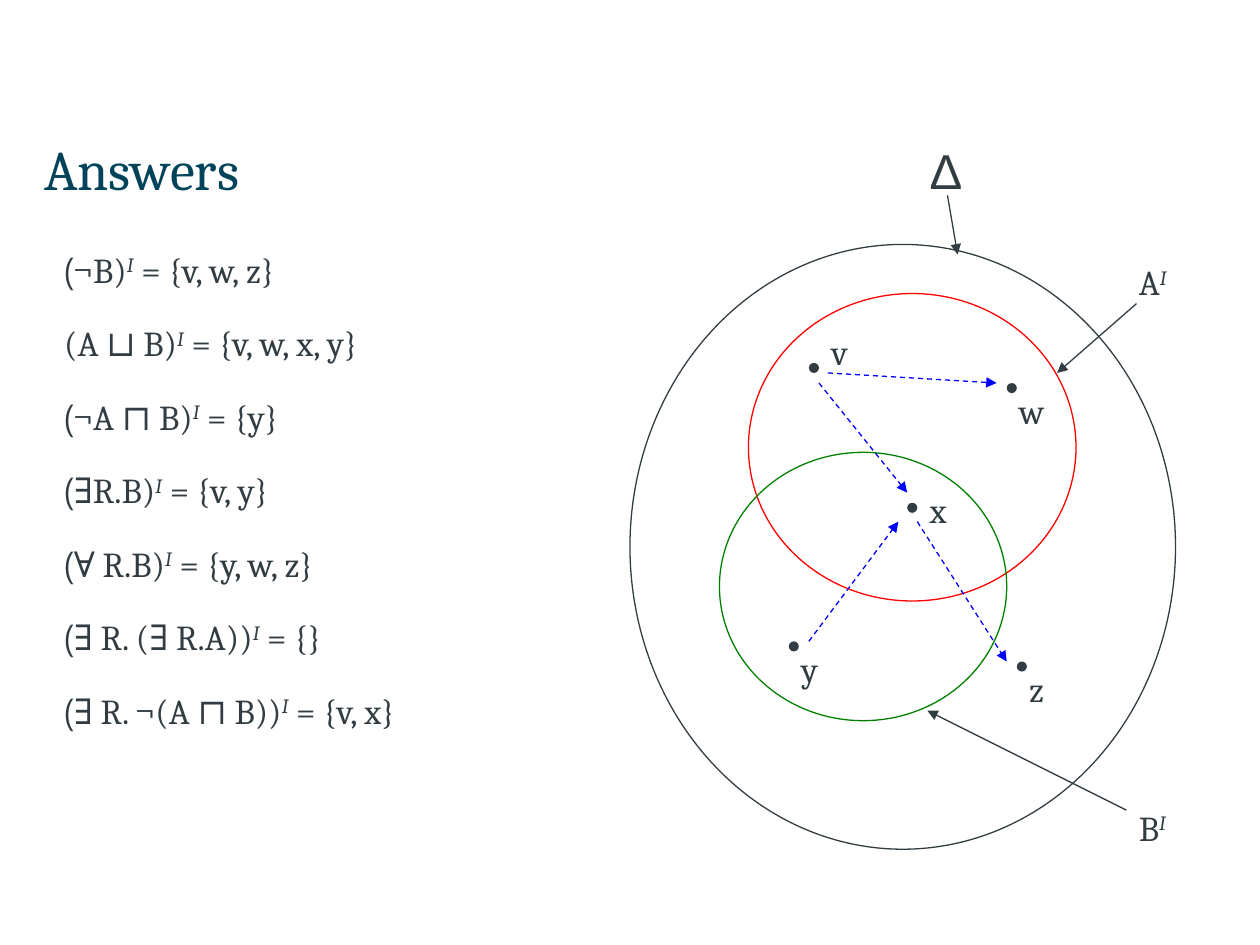
import pptx
import pptx.util
import pptx.dml.color
import pptx.enum.dml
import pptx.enum.shapes
import pptx.enum.text
import pptx.oxml
import pptx.oxml.ns

Inches, Pt = pptx.util.Inches, pptx.util.Pt
RGBColor = pptx.dml.color.RGBColor
Shape = pptx.enum.shapes.MSO_SHAPE
Fit = pptx.enum.text.MSO_AUTO_SIZE
Anchor = pptx.enum.text.MSO_ANCHOR
Align = pptx.enum.text.PP_ALIGN

INK = RGBColor(0x32, 0x3D, 0x43)
TEAL = RGBColor(0x01, 0x43, 0x59)
RED = RGBColor(0xFF, 0, 0)
GREEN = RGBColor(0, 0x80, 0)
BLUE = RGBColor(0, 0, 0xFF)
SERIF, NARROW, SANS = "Cambria", "Arial Narrow", "Arial"

TITLE = "Answers"
# font of the opening bracket, concept, its members
ANSWERS = [
    (NARROW, "¬B)", "{v, w, z}"),
    (SERIF, "A ⊔ B)", "{v, w, x, y}"),
    (NARROW, "¬A ⊓ B)", "{y}"),
    (NARROW, "∃R.B)", "{v, y}"),
    (NARROW, "∀ R.B)", "{y, w, z}"),
    (NARROW, "∃ R. (∃ R.A))", "{}"),
    (NARROW, "∃ R. ¬(A ⊓ B))", "{v, x}"),
]
# left, top, width, height, colour
DOMAIN = (5, 1.94, 4.33, 4.8, INK)
SETS = [(5.94, 2.33, 2.6, 2.44, RED), (5.71, 3.59, 2.28, 2.13, GREEN)]
# name, left and top of the dot, offset of the label
POINTS = [
    ("v", 6.42, 2.88, 0.08, -0.31),
    ("w", 7.99, 3.04, 0, 0),
    ("y", 6.26, 5.09, 0, 0),
    ("z", 8.07, 5.25, 0, 0),
    ("x", 7.2, 3.99, 0.08, -0.16),
]
DOT = 0.08
# x and y of the start, x and y of the head
ROLES = [
    (6.57, 2.96, 7.91, 3.04),
    (6.5, 3.04, 7.2, 3.91),
    (6.42, 5.09, 7.13, 4.14),
    (7.28, 4.14, 7.99, 5.25),
]
LEADS = [
    (8.94, 6.43, 7.36, 5.64),
    (9.02, 2.41, 8.39, 2.96),
    (7.52, 1.55, 7.6, 2.02),
]
NAMES = [("A", 8.94, 2.02), ("B", 8.94, 6.35)]


def write(para, text, font=SERIF, size=20, color=INK, sup=False):
    """Add a run; sup makes it a raised italic."""
    run = para.add_run()
    run.text = text
    run.font.name = font
    run.font.size = Pt(size)
    run.font.color.rgb = color
    run.font.italic = sup
    if sup:
        run._r.get_or_add_rPr().set("baseline", "30000")


def place(shape, left, top, width, height):
    shape.left, shape.top = Inches(left), Inches(top)
    shape.width, shape.height = Inches(width), Inches(height)


def setup(holder, anchor):
    """Give a placeholder its insets and return its text frame."""
    frame = holder.text_frame
    frame.margin_left, frame.margin_right = 0, Inches(0.1)
    frame.margin_top = frame.margin_bottom = Inches(0.05)
    frame.auto_size = Fit.NONE
    frame.vertical_anchor = anchor
    return frame


def oval(slide, left, top, width, height, color, solid=False):
    shape = slide.shapes.add_shape(
        Shape.OVAL, Inches(left), Inches(top), Inches(width), Inches(height))
    shape.shadow.inherit = False
    if solid:
        shape.fill.solid()
        shape.fill.fore_color.rgb = color
        shape.line.fill.background()
    else:
        shape.fill.background()
        shape.line.color.rgb = color
        shape.line.width = Pt(0.75)


def label(slide, left, top, width, height, wrap=True):
    """Add a text box and return its first paragraph."""
    box = slide.shapes.add_textbox(
        Inches(left), Inches(top), Inches(width), Inches(height))
    box.text_frame.word_wrap = wrap
    box.text_frame.auto_size = Fit.SHAPE_TO_FIT_TEXT
    return box.text_frame.paragraphs[0]


def arrow(slide, ends, color, dash=False):
    line = slide.shapes.add_connector(
        pptx.enum.shapes.MSO_CONNECTOR.STRAIGHT, *map(Inches, ends))
    line.line.color.rgb = color
    line.line.width = Pt(0.75)
    if dash:
        line.line.dash_style = pptx.enum.dml.MSO_LINE.DASH
    space = pptx.oxml.ns.nsdecls("a")
    line.line._get_or_add_ln().append(
        pptx.oxml.parse_xml(f'<a:tailEnd {space} type="triangle"/>'))
    line._element.spPr.append(pptx.oxml.parse_xml(f"<a:effectLst {space}/>"))


def answers(slide):
    body = slide.placeholders[1]
    place(body, 0.51, 1.92, 5.12, 5.3)
    frame = setup(body, Anchor.TOP)
    for num, (font, concept, members) in enumerate(ANSWERS):
        para = frame.add_paragraph() if num else frame.paragraphs[0]
        props = para._p.get_or_add_pPr()
        props.set("marL", str(Inches(0.19)))
        props.set("indent", str(-Inches(0.19)))
        props.append(pptx.oxml.parse_xml(
            f'<a:buNone {pptx.oxml.ns.nsdecls("a")}/>'))
        para.space_before, para.space_after = Pt(0), Pt(18)
        write(para, "(", font=font)
        write(para, concept)
        write(para, "I", sup=True)
        write(para, f" = {members}")


def diagram(slide):
    oval(slide, *DOMAIN)
    for name, left, top, right, down in POINTS:
        oval(slide, left, top, DOT, DOT, INK, solid=True)
        write(label(slide, left + right, top + down, 0.39, 0.43), name)
    for ring in SETS:
        oval(slide, *ring)
    for ends in ROLES:
        arrow(slide, ends, BLUE, dash=True)
    for ends in LEADS:
        arrow(slide, ends, INK)
    write(label(slide, 7.28, 1.07, 0.44, 0.57, wrap=False), "Δ",
          font=SANS, size=28)
    for name, left, top in NAMES:
        para = label(slide, left, top, 0.55, 0.43)
        write(para, name)
        write(para, "I", sup=True)


def main():
    deck = pptx.Presentation()
    deck.slide_width, deck.slide_height = Inches(10), Inches(7.5)
    slide = deck.slides.add_slide(deck.slide_layouts[1])
    title = slide.shapes.title
    place(title, 0.35, 0.98, 9.29, 0.71)
    para = setup(title, Anchor.MIDDLE).paragraphs[0]
    para.alignment = Align.LEFT
    write(para, TITLE, size=32, color=TEAL)
    answers(slide)
    diagram(slide)
    deck.save("out.pptx")


if __name__ == "__main__":
    main()
